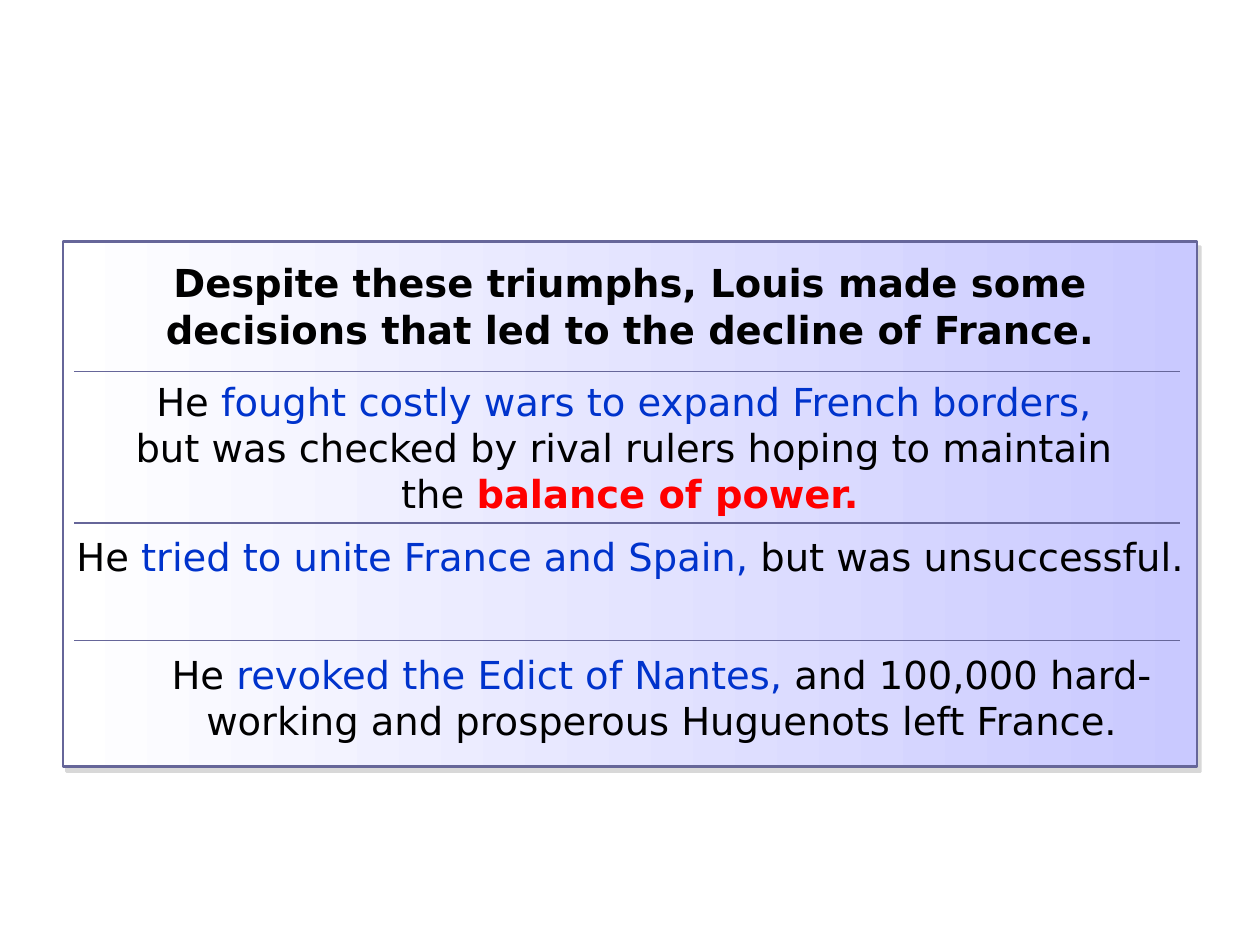
import pptx
import pptx.dml.color
import pptx.enum.shapes
import pptx.enum.text
import pptx.oxml
import pptx.oxml.ns
import pptx.util

Pt = pptx.util.Pt

COLORS = {
    "black": "000000",
    "blue": "0033CC",
    "red": "FF0000",
    "frame": "666699",
    "panel_start": "FFFFFF",
    "panel_end": "C9C9FF",
    "shadow": "B2B2B2",
}


def rgb(name):
    return pptx.dml.color.RGBColor.from_string(COLORS[name])


def element(xml):
    namespace = pptx.oxml.ns.nsdecls("a")
    return pptx.oxml.parse_xml(xml.replace(">", f" {namespace}>", 1))


class SlideBuilder:
    font_name = "DejaVu Sans"
    font_size = 22

    def __init__(self, slide):
        self.slide = slide

    def panel(self, left, top, width, height):
        shape = self.slide.shapes.add_shape(
            pptx.enum.shapes.MSO_SHAPE.RECTANGLE,
            Pt(left), Pt(top), Pt(width), Pt(height))
        shape.fill.gradient()
        shape.fill.gradient_angle = 0
        for stop, name in zip(shape.fill.gradient_stops, ("panel_start", "panel_end")):
            stop.color.rgb = rgb(name)
        shape.line.color.rgb = rgb("frame")
        shape.line.width = Pt(1.5)
        shape.shadow.inherit = False
        effects = shape._element.spPr.find(pptx.oxml.ns.qn("a:effectLst"))
        effects.append(element(
            f'<a:outerShdw dist="{Pt(3.6)}" dir="{56 * 60000}" algn="ctr" rotWithShape="0">'
            f'<a:srgbClr val="{COLORS["shadow"]}"><a:alpha val="50000"/></a:srgbClr>'
            '</a:outerShdw>'))

    def border(self, cell, side, visible):
        paint = f'<a:solidFill><a:srgbClr val="{COLORS["frame"]}"/></a:solidFill>'
        cell._tc.get_or_add_tcPr().append(element(
            f'<a:{side} w="{Pt(1)}">{paint if visible else "<a:noFill/>"}</a:{side}>'))

    def ruled_table(self, left, top, width, row_heights):
        table = self.slide.shapes.add_table(
            len(row_heights), 1, Pt(left), Pt(top), Pt(width), Pt(sum(row_heights))).table
        table.first_row = False
        table.horz_banding = False
        last = len(row_heights) - 1
        for index, height in enumerate(row_heights):
            table.rows[index].height = Pt(height)
            cell = table.cell(index, 0)
            sides = {"lnL": False, "lnR": False, "lnT": index > 0, "lnB": index < last}
            for side, visible in sides.items():
                self.border(cell, side, visible)
            cell.fill.background()

    def text(self, left, top, width, height, segments, indent=0):
        shape = self.slide.shapes.add_textbox(Pt(left), Pt(top), Pt(width), Pt(height))
        text_frame = shape.text_frame
        text_frame.word_wrap = True
        text_frame.auto_size = pptx.enum.text.MSO_AUTO_SIZE.SHAPE_TO_FIT_TEXT
        paragraph = text_frame.paragraphs[0]
        paragraph.alignment = pptx.enum.text.PP_ALIGN.CENTER
        if indent:
            paragraph.level = 1
            properties = paragraph._p.get_or_add_pPr()
            properties.set("marL", str(Pt(indent)))
            properties.set("indent", "0")
        for content, color, bold in segments:
            for index, line in enumerate(content.split("\n")):
                if index:
                    paragraph.add_line_break()
                if line:
                    run = paragraph.add_run()
                    run.text = line
                    run.font.name = self.font_name
                    run.font.size = Pt(self.font_size)
                    run.font.bold = bold
                    run.font.color.rgb = rgb(color)


def main():
    presentation = pptx.Presentation()
    presentation.slide_width = Pt(720)
    presentation.slide_height = Pt(540)
    builder = SlideBuilder(presentation.slides.add_slide(presentation.slide_layouts[6]))

    left, width = 36, 648
    builder.panel(left, 138, width, 300)
    builder.ruled_table(42.5, 126, 632, [86.4, 86.4, 67.2, 86.4])
    statements = [
        (144.7, 60, 0, [
            ("Despite these triumphs, Louis made some decisions that led to the "
             "decline of France.", "black", True)]),
        (212.4, 86.4, 0, [
            ("He ", "black", False),
            ("fought costly wars to expand French borders, \n", "blue", False),
            ("but was checked by rival rulers hoping to maintain \nthe ", "black", False),
            ("balance of power.", "red", True)]),
        (301, 60, 0, [
            ("He ", "black", False),
            ("tried to unite France and Spain, ", "blue", False),
            ("but was unsuccessful.", "black", False)]),
        (368.6, 60, 36, [
            ("He ", "black", False),
            ("revoked the Edict of Nantes,", "blue", False),
            (" and 100,000 hard-working and prosperous Huguenots left France.",
             "black", False)]),
    ]
    for top, height, indent, segments in statements:
        builder.text(left, top, width, height, segments, indent)
    presentation.save("out.pptx")


if __name__ == "__main__":
    main()
